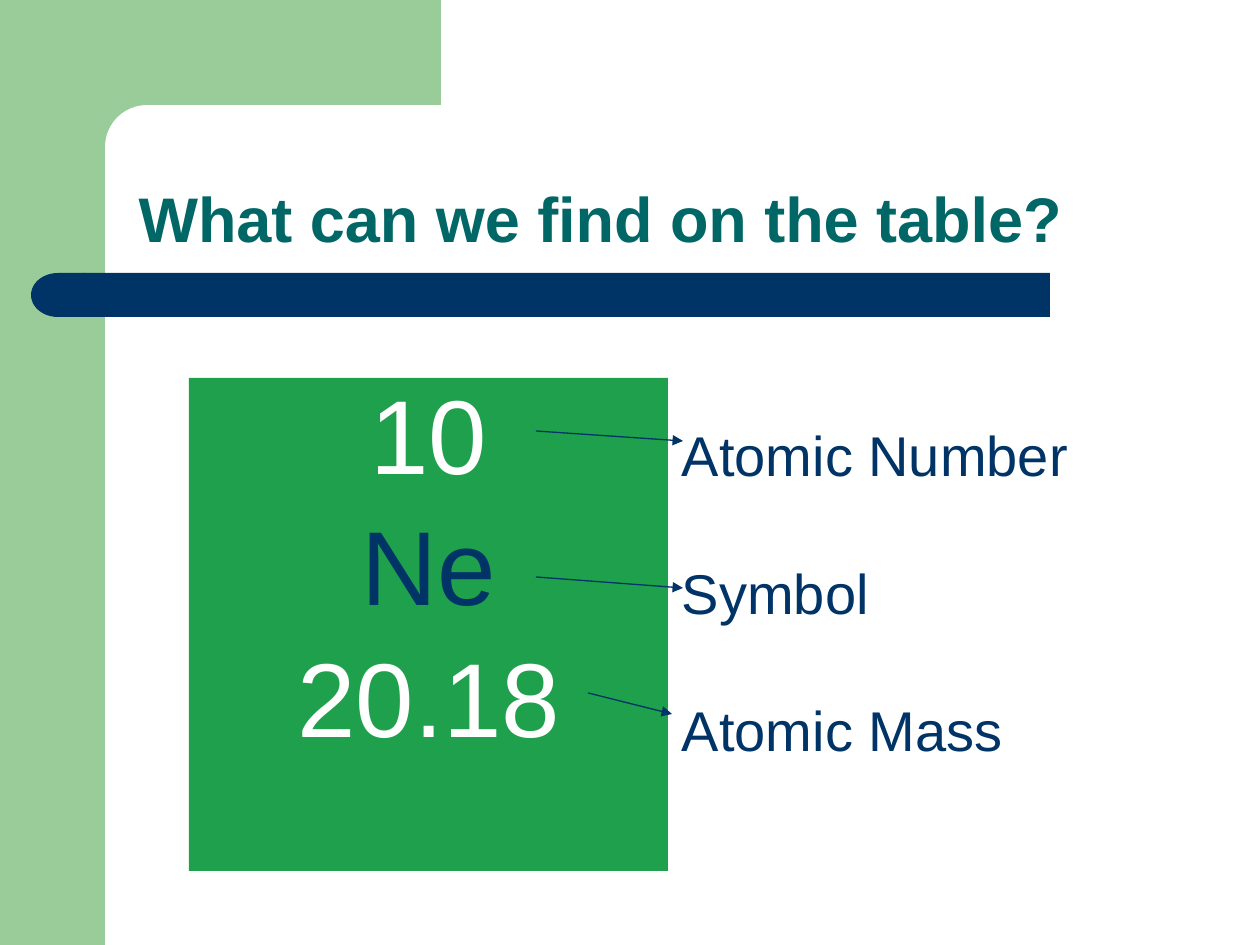
from dataclasses import dataclass

from lxml.etree import SubElement
from pptx import Presentation
from pptx.dml.color import RGBColor
from pptx.enum.shapes import MSO_CONNECTOR, MSO_SHAPE
from pptx.enum.text import MSO_ANCHOR, PP_ALIGN
from pptx.oxml.ns import qn
from pptx.util import Pt

PX = 7257  # EMU in one px, at 126 px to the inch


@dataclass(frozen=True)
class Theme:
    font: str = "Arial"
    pale: str = "99CC99"
    white: str = "FFFFFF"
    navy: str = "003366"
    teal: str = "006666"
    green: str = "1FA04D"
    title_size: int = 36
    element_size: int = 60
    label_size: int = 32
    line_width: float = 0.75


THEME = Theme()


def px(*lengths):
    return [length * PX for length in lengths]


def apply(target, values):
    for name, value in values.items():
        setattr(target, name, value)


def add_block(slide, preset, at, color, adjustment=None, flip=False):
    """Add a filled shape without outline."""
    block = slide.shapes.add_shape(preset, *px(*at))
    block.shadow.inherit = False
    block.fill.solid()
    block.fill.fore_color.rgb = RGBColor.from_string(color)
    block.line.fill.background()
    if adjustment is not None:
        block.adjustments[0] = adjustment
    if flip:
        block._element.spPr.find(qn("a:xfrm")).set("flipH", "1")
    return block


def write(shape, lines, size, frame_format, gap=0, bold=False, **para_format):
    """Write (text, color) lines, one paragraph each, with a gap between them."""
    frame = shape.text_frame
    apply(frame, {"word_wrap": True, **frame_format})
    for index, (text, color) in enumerate(lines):
        para = frame.add_paragraph() if index else frame.paragraphs[0]
        apply(para, {"space_before": Pt(gap if index else 0), **para_format})
        span = para.add_run()
        span.text = text
        apply(span.font, {"name": THEME.font, "size": Pt(size), "bold": bold})
        span.font.color.rgb = RGBColor.from_string(color)


def add_arrow(slide, start, end):
    arrow = slide.shapes.add_connector(MSO_CONNECTOR.STRAIGHT, *px(*start, *end))
    arrow.line.width = Pt(THEME.line_width)
    arrow.line.color.rgb = RGBColor.from_string(THEME.navy)
    SubElement(arrow.line._get_or_add_ln(), qn("a:tailEnd"), type="triangle")
    SubElement(arrow._element.spPr, qn("a:effectLst"))


def add_backdrop(slide):
    # Pale corner with a rounded white page
    add_block(slide, MSO_SHAPE.RECTANGLE, (0, 0, 105, 945), THEME.pale)
    add_block(slide, MSO_SHAPE.RECTANGLE, (94, 0, 347, 147), THEME.pale)
    add_block(slide, MSO_SHAPE.ROUNDED_RECTANGLE, (105, 105, 703, 84), THEME.white, 0.5)
    # Bar under the title
    add_block(slide, MSO_SHAPE.RECTANGLE, (84, 273, 966, 44), THEME.navy)
    add_block(slide, MSO_SHAPE.FLOWCHART_DELAY, (31, 273, 54, 44), THEME.navy, flip=True)


def set_title(slide, text):
    title = slide.shapes.title
    apply(title, dict(zip(("left", "top", "width", "height"), px(126, 105, 1103, 157))))
    write(title, [(text, THEME.teal)], THEME.title_size,
          {"vertical_anchor": MSO_ANCHOR.BOTTOM}, bold=True,
          alignment=PP_ALIGN.LEFT, line_spacing=0.9)
    slide.shapes._spTree.append(title._element)  # in front of the backdrop


def add_element_tile(slide):
    add_block(slide, MSO_SHAPE.RECTANGLE, (189, 378, 479, 493), THEME.green)
    tile = add_block(slide, MSO_SHAPE.RECTANGLE, (192, 382, 474, 474), THEME.green)
    lines = [("10", THEME.white), ("Ne", THEME.navy), ("20.18", THEME.white)]
    write(tile, lines, THEME.element_size,
          {"vertical_anchor": MSO_ANCHOR.MIDDLE, "margin_top": 0, "margin_bottom": 110 * PX},
          gap=3, alignment=PP_ALIGN.CENTER)


def add_labels(slide):
    box = slide.shapes.add_textbox(*px(670, 382, 474, 474))
    lines = [(text, THEME.navy) for text in ("Atomic Number", "Symbol", "Atomic Mass")]
    write(box, lines, THEME.label_size,
          {"vertical_anchor": MSO_ANCHOR.TOP, "margin_top": 39 * PX, "margin_left": 12 * PX},
          gap=40, alignment=PP_ALIGN.LEFT)


def main():
    deck = Presentation()
    deck.slide_width, deck.slide_height = px(1260, 945)
    page = deck.slides.add_slide(deck.slide_layouts[5])  # title only
    add_backdrop(page)
    set_title(page, "What can we find on the table?")
    add_element_tile(page)
    add_labels(page)
    # Arrows from each value to its label
    for start, end in (((536, 431), (683, 441)),
                       ((536, 577), (683, 588)),
                       ((588, 693), (672, 714))):
        add_arrow(page, start, end)
    deck.save("out.pptx")


if __name__ == "__main__":
    main()
